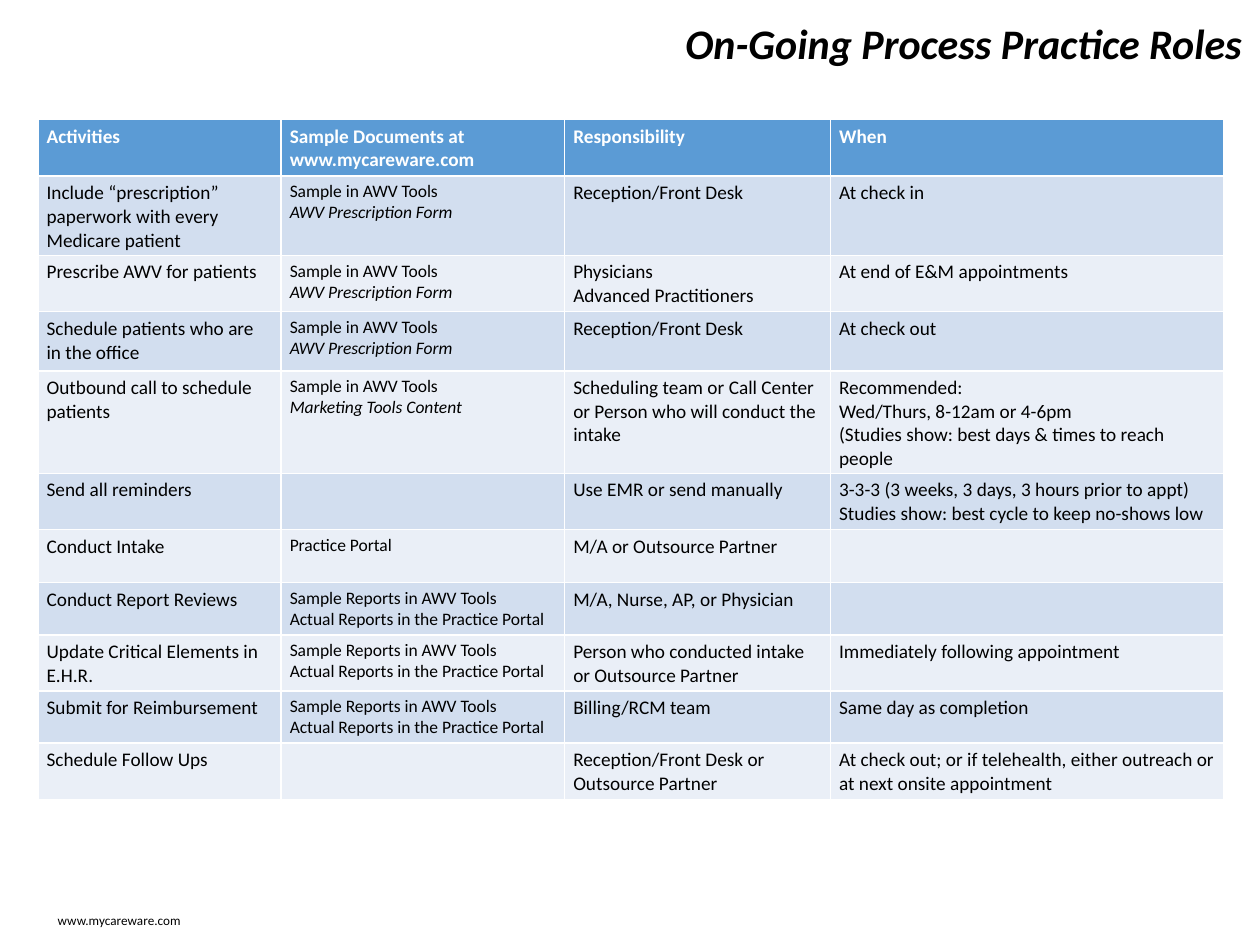
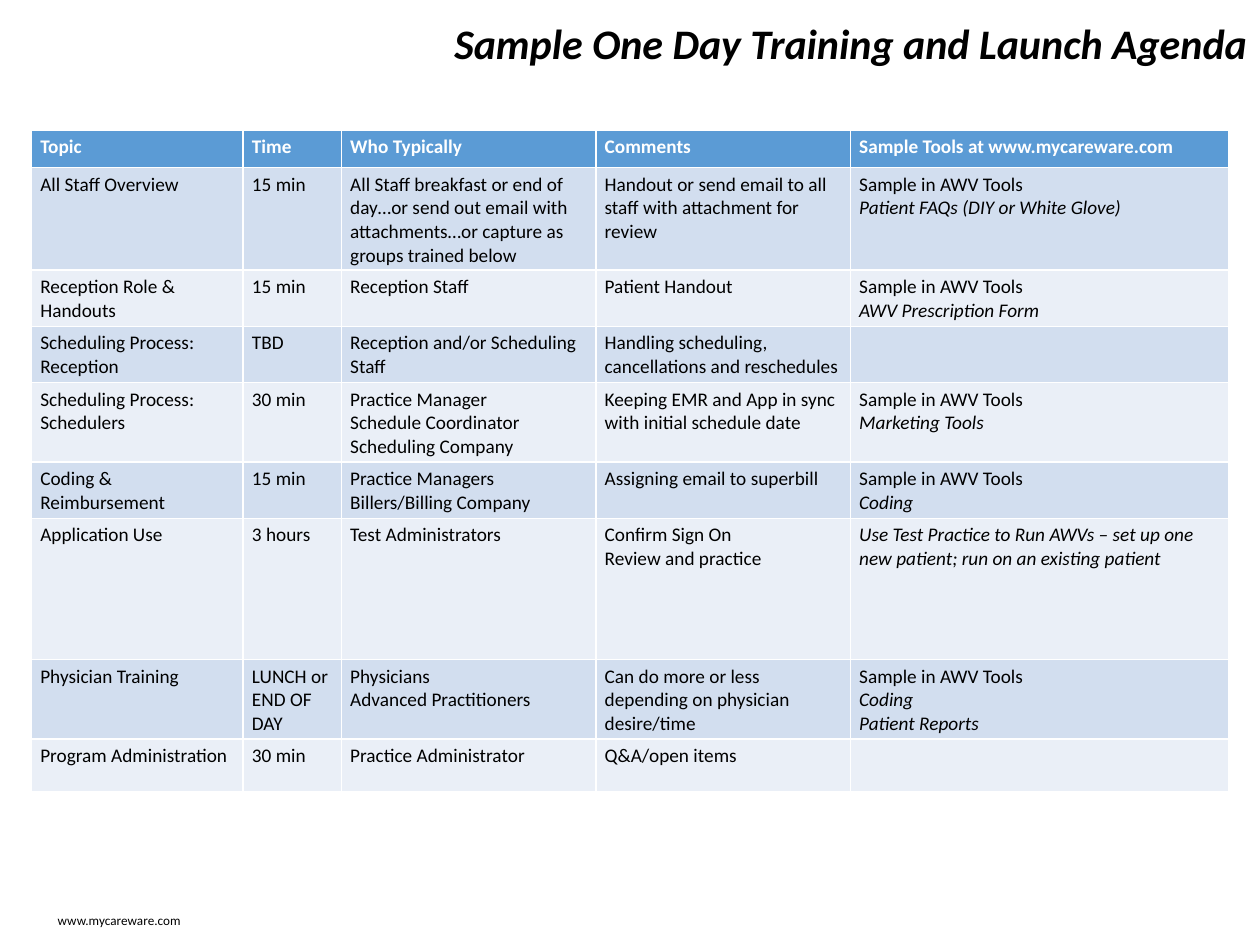
from pptx import Presentation
from pptx.dml.color import RGBColor
from pptx.enum.text import MSO_ANCHOR, MSO_AUTO_SIZE, PP_ALIGN
from pptx.util import Inches, Pt

FONT = "Calibri"
BLACK, WHITE = "000000", "FFFFFF"
HEADER_FILL = "5B9BD5"
BAND_FILLS = ["D2DEEF", "EAEFF7"]
SITE = "www.mycareware.com"
ITALIC_MARK = "*"  # starts a line set in italics

# Repeated cell texts
PRESCRIPTION = "Sample in AWV Tools\n*AWV Prescription Form"
REPORTS = "Sample Reports in AWV Tools\nActual Reports in the Practice Portal"
CLINICIANS = "Physicians\nAdvanced Practitioners"

ROLES = [
    ["Activities", f"Sample Documents at\n{SITE}", "Responsibility", "When"],
    ["Include “prescription” paperwork with every Medicare patient", PRESCRIPTION,
     "Reception/Front Desk", "At check in"],
    ["Prescribe AWV for patients", PRESCRIPTION, CLINICIANS,
     "At end of E&M appointments"],
    ["Schedule patients who are in the office", PRESCRIPTION,
     "Reception/Front Desk", "At check out"],
    ["Outbound call to schedule patients",
     "Sample in AWV Tools\n*Marketing Tools Content",
     "Scheduling team or Call Center or Person who will conduct the intake",
     "Recommended:\nWed/Thurs, 8-12am or 4-6pm\n"
     "(Studies show: best days & times to reach people"],
    ["Send all reminders", "", "Use EMR or send manually",
     "3-3-3 (3 weeks, 3 days, 3 hours prior to appt)\n"
     "Studies show: best cycle to keep no-shows low"],
    ["Conduct Intake", "Practice Portal", "M/A or Outsource Partner", ""],
    ["Conduct Report Reviews", REPORTS, "M/A, Nurse, AP, or Physician", ""],
    ["Update Critical Elements in E.H.R.", REPORTS,
     "Person who conducted intake or Outsource Partner",
     "Immediately following appointment"],
    ["Submit for Reimbursement", REPORTS, "Billing/RCM team", "Same day as completion"],
    ["Schedule Follow Ups", "", "Reception/Front Desk or Outsource Partner",
     "At check out; or if telehealth, either outreach or at next onsite appointment"],
]
ROLE_WIDTHS = [1.93, 2.25, 2.11, 3.12]
ROLE_HEIGHTS = [0.44, 0.62, 0.44, 0.47, 0.81, 0.44, 0.42, 0.41, 0.44, 0.41, 0.44]

AGENDA = [
    ["Topic", "Time", "Who Typically", "Comments", f"Sample Tools at {SITE}"],
    ["All Staff Overview", "15 min",
     "All Staff breakfast or end of day…or send out email with attachments…"
     "or capture as groups trained below",
     "Handout or send email to all staff with attachment for review",
     "Sample in AWV Tools\n*Patient FAQs (DIY or White Glove)"],
    ["Reception Role & Handouts", "15 min", "Reception Staff", "Patient Handout",
     PRESCRIPTION],
    ["Scheduling Process: Reception", "TBD", "Reception and/or Scheduling Staff",
     "Handling scheduling, cancellations and reschedules", ""],
    ["Scheduling Process: Schedulers", "30 min",
     "Practice Manager\nSchedule Coordinator\nScheduling Company",
     "Keeping EMR and App in sync with initial schedule date",
     "Sample in AWV Tools\n*Marketing Tools"],
    ["Coding & Reimbursement", "15 min", "Practice Managers\nBillers/Billing Company",
     "Assigning email to superbill", "Sample in AWV Tools\n*Coding"],
    ["Application Use", "3 hours", "Test Administrators",
     "Confirm Sign On\nReview and practice",
     "*Use Test Practice to Run AWVs – set up one new patient; "
     "run on an existing patient"],
    ["Physician Training", "LUNCH or END OF DAY", CLINICIANS,
     "Can do more or less depending on physician desire/time",
     "Sample in AWV Tools\n*Coding\n*Patient Reports"],
    ["Program Administration", "30 min", "Practice Administrator", "Q&A/open items", ""],
]
AGENDA_WIDTHS = [1.68, 0.78, 2.02, 2.02, 3]
AGENDA_HEIGHTS = [0.3, 0.81, 0.44, 0.44, 0.63, 0.44, 1.12, 0.63, 0.42]


def rgb(hex_color):
    return RGBColor.from_string(hex_color)


def format_font(font, size, color=BLACK, bold=False, italic=False):
    font.name = FONT
    font.size = Pt(size)
    font.color.rgb = rgb(color)
    font.bold = bold
    font.italic = italic


def add_title(slide, text, left, align):
    title = slide.shapes.title
    title.left, title.top = Inches(left), Inches(0.09)
    title.width, title.height = Inches(10 - left), Inches(0.5)
    frame = title.text_frame
    frame.text = text
    frame.auto_size = MSO_AUTO_SIZE.NONE
    frame.word_wrap = align == PP_ALIGN.RIGHT
    frame.vertical_anchor = MSO_ANCHOR.TOP
    paragraph = frame.paragraphs[0]
    paragraph.alignment = align
    format_font(paragraph.runs[0].font, 24, bold=True, italic=True)


def add_footer(slide):
    footer = slide.shapes.add_textbox(Inches(0.36), Inches(7.19), Inches(1.32), Inches(0.23))
    frame = footer.text_frame
    frame.word_wrap = True
    frame.text = SITE
    format_font(frame.paragraphs[0].runs[0].font, 7.5)


def fill_cell(cell, text, fill, size, color, bold):
    cell.margin_left = cell.margin_right = Inches(0.07)
    cell.margin_top = cell.margin_bottom = Inches(0.04)
    cell.fill.solid()
    cell.fill.fore_color.rgb = rgb(fill)
    if not text:
        return
    cell.text_frame.text = text.replace(ITALIC_MARK, "")
    for line, paragraph in zip(text.split("\n"), cell.text_frame.paragraphs):
        format_font(paragraph.runs[0].font, size, color, bold,
                    italic=line.startswith(ITALIC_MARK))


def add_schedule(slide, left, top, widths, heights, rows, small_column=None):
    # The default table style supplies the white cell borders
    table = slide.shapes.add_table(
        len(rows), len(widths), Inches(left), Inches(top),
        Inches(sum(widths)), Inches(sum(heights))).table
    for column, width in zip(table.columns, widths):
        column.width = Inches(width)
    for r, (texts, height) in enumerate(zip(rows, heights)):
        table.rows[r].height = Inches(height)
        header = r == 0
        fill = HEADER_FILL if header else BAND_FILLS[(r - 1) % 2]
        for c, text in enumerate(texts):
            size = 10 if c == small_column and not header else 11
            fill_cell(table.cell(r, c), text, fill, size,
                      WHITE if header else BLACK, header)


def add_page(deck, title, title_left, title_align):
    slide = deck.slides.add_slide(deck.slide_layouts[5])
    add_footer(slide)
    add_title(slide, title, title_left, title_align)
    return slide


def main():
    deck = Presentation()
    deck.slide_width, deck.slide_height = Inches(10), Inches(7.5)

    # Practice roles
    roles = add_page(deck, "On-Going Process Practice Roles", 5.34, PP_ALIGN.LEFT)
    add_schedule(roles, 0.3, 0.95, ROLE_WIDTHS, ROLE_HEIGHTS, ROLES, small_column=1)

    # Training agenda
    agenda = add_page(deck, "Sample One Day Training and Launch Agenda", 2.84, PP_ALIGN.RIGHT)
    add_schedule(agenda, 0.25, 1.03, AGENDA_WIDTHS, AGENDA_HEIGHTS, AGENDA)

    deck.save("out.pptx")


if __name__ == "__main__":
    main()
